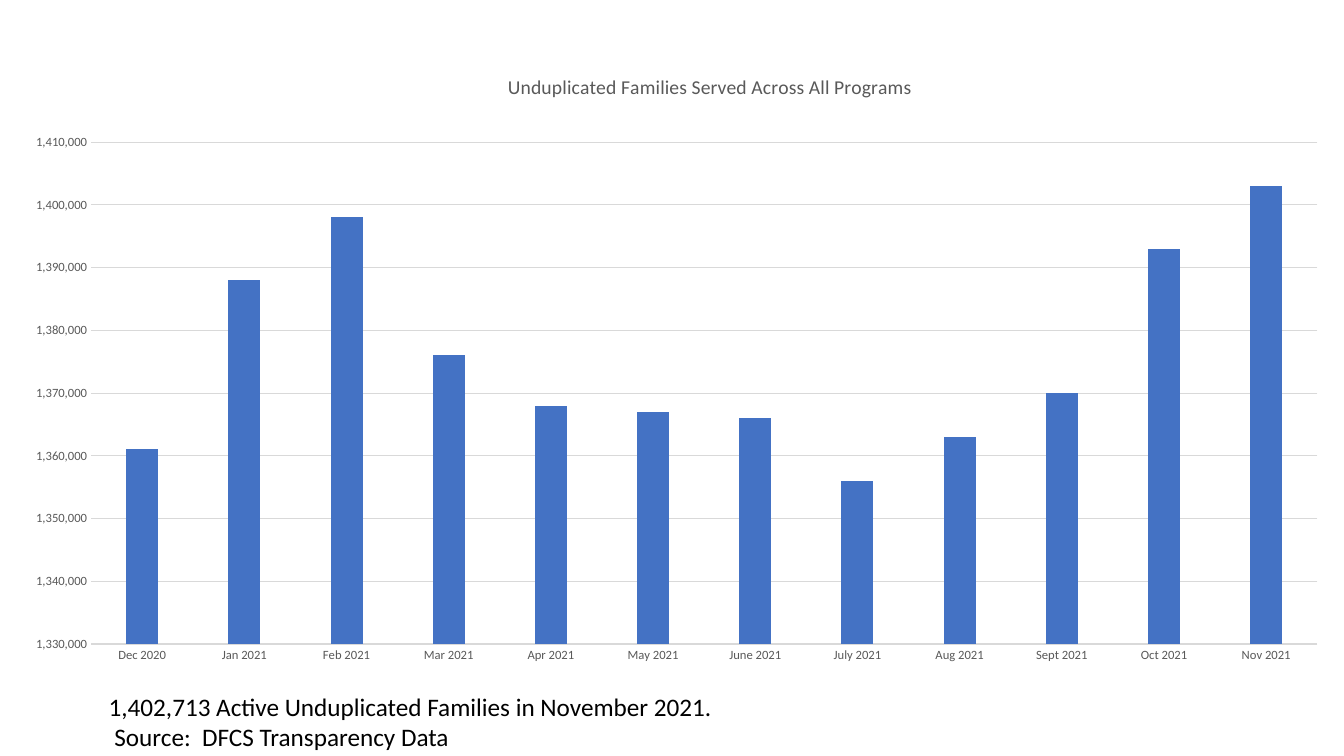
"""Build a slide with a column chart of unduplicated families served by month."""
from lxml import etree
from pptx import Presentation
from pptx import util as u
from pptx.chart import data
from pptx.dml import color
from pptx.enum import chart as kinds, text
from pptx.oxml import ns

COLORS = {"bar": "4472C4", "label": "595959", "grid": "D9D9D9", "note": "000000"}
FAMILIES = {
    "Dec 2020": 1361000, "Jan 2021": 1388000, "Feb 2021": 1398000,
    "Mar 2021": 1376000, "Apr 2021": 1368000, "May 2021": 1367000,
    "June 2021": 1366000, "July 2021": 1356000, "Aug 2021": 1363000,
    "Sept 2021": 1370000, "Oct 2021": 1393000, "Nov 2021": 1403000,
}


def style_font(font, size, name):
    for key, value in {"size": u.Pt(size), "name": "Calibri", "bold": False}.items():
        setattr(font, key, value)
    font.color.rgb = color.RGBColor.from_string(COLORS[name])


def set_layout(parent, position, values):
    for old in parent.findall(ns.qn("c:layout")):
        parent.remove(old)
    layout = etree.Element(ns.qn("c:layout"))
    manual = etree.SubElement(layout, ns.qn("c:manualLayout"))
    for tag, value in values.items():
        etree.SubElement(manual, ns.qn(f"c:{tag}")).set("val", str(value))
    parent.insert(position, layout)


deck = Presentation()
deck.slide_width, deck.slide_height = u.Inches(13.33), u.Inches(7.5)
page = deck.slides.add_slide(deck.slide_layouts[6])

table = data.CategoryChartData(number_format="#,##0")
table.categories = list(FAMILIES)
table.add_series("Series 1", list(FAMILIES.values()))
chart = page.shapes.add_chart(
    kinds.XL_CHART_TYPE.COLUMN_CLUSTERED,
    u.Inches(0.11), u.Inches(0.69), u.Inches(13.22), u.Inches(6), table,
).chart
style_font(chart.font, 10, "note")
chart.has_legend = False
chart.has_title = True
title = chart.chart_title
title.include_in_layout = False
title.text_frame.text = "Unduplicated Families Served Across All Programs"
style_font(title.text_frame.paragraphs[0].runs[0].font, 14, "label")
chart_root = chart.element.find(ns.qn("c:chart"))
set_layout(chart_root.find(ns.qn("c:title")), 1,
           {"xMode": "edge", "yMode": "edge", "x": 0.37, "y": 0})
set_layout(chart_root.find(ns.qn("c:plotArea")), 0,
           {"layoutTarget": "inner", "xMode": "edge", "yMode": "edge",
            "x": 0.06, "y": 0.12, "w": 0.92, "h": 0.83})

plot = chart.plots[0]
for key, value in {"gap_width": 219, "overlap": -27, "vary_by_categories": False}.items():
    setattr(plot, key, value)
bars = plot.series[0].format.fill
bars.solid()
bars.fore_color.rgb = color.RGBColor.from_string(COLORS["bar"])

months, counts = chart.category_axis, chart.value_axis
for axis in (months, counts):
    axis.major_tick_mark = axis.minor_tick_mark = kinds.XL_TICK_MARK.NONE
    style_font(axis.tick_labels.font, 9, "label")
for key, value in {"minimum_scale": 1330000, "maximum_scale": 1410000,
                   "major_unit": 10000, "has_major_gridlines": True}.items():
    setattr(counts, key, value)
counts.tick_labels.number_format = "#,##0"
counts.tick_labels.number_format_is_linked = False
counts.format.line.fill.background()
for line in (months.format.line, counts.major_gridlines.format.line):
    line.width = u.Pt(0.75)
    line.color.rgb = color.RGBColor.from_string(COLORS["grid"])

box = page.shapes.add_textbox(u.Inches(0.98), u.Inches(6.81), u.Inches(6.23), u.Inches(0.71))
box.text_frame.word_wrap = True
box.text_frame.auto_size = text.MSO_AUTO_SIZE.SHAPE_TO_FIT_TEXT
span = box.text_frame.paragraphs[0].add_run()
span.text = "1,402,713 Active Unduplicated Families in November 2021.  Source:  DFCS Transparency Data"
style_font(span.font, 18, "note")

deck.save("out.pptx")
